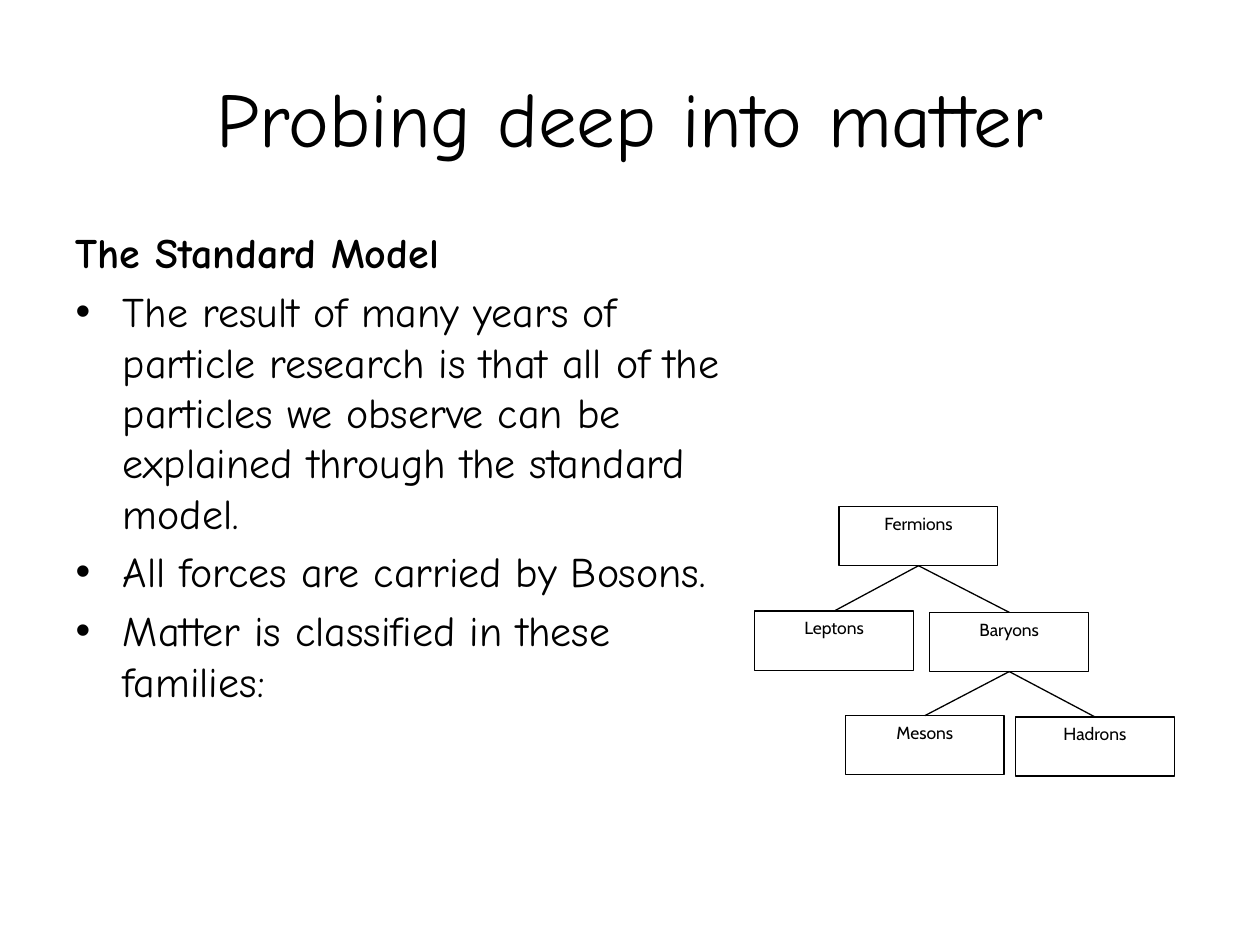
import dataclasses
import typing

import lxml.etree
import pptx
import pptx.dml.color
import pptx.enum.shapes
import pptx.enum.text
import pptx.oxml.ns
import pptx.util

Inches = pptx.util.Inches
Align = pptx.enum.text.PP_ALIGN
Anchor = pptx.enum.text.MSO_ANCHOR


@dataclasses.dataclass(frozen=True)
class Theme:
    ink: pptx.dml.color.RGBColor = pptx.dml.color.RGBColor(0, 0, 0)
    paper: pptx.dml.color.RGBColor = pptx.dml.color.RGBColor(255, 255, 255)
    hand: str = "Comic Neue"
    label: str = "Cabin"
    title: float = 44
    body: float = 24
    small: float = 10
    line: float = 0.75


@dataclasses.dataclass(frozen=True)
class Node:
    name: str
    left: float
    top: float
    parent: typing.Optional[str] = None


THEME = Theme()
BOX = (1.26, 0.47)
BOTTOM, TOP = 2, 0  # connection sites of a rectangle

HEAD = "The Standard Model"
POINTS = [
    "The result of many years of particle research is that all of the "
    "particles we observe can be explained through the standard model.",
    "All forces are carried by Bosons.",
    "Matter is classified in these families:",
]
TREE = [
    Node("Fermions", 6.66, 4.02),
    Node("Leptons", 5.99, 4.85, "Fermions"),
    Node("Baryons", 7.38, 4.86, "Fermions"),
    Node("Mesons", 6.71, 5.68, "Baryons"),
    Node("Hadrons", 8.06, 5.69, "Baryons"),
]


def style(para, font: str, size: float, bold: bool = False) -> None:
    for run in para.runs:
        run.font.name = font
        run.font.size = pptx.util.Pt(size)
        run.font.bold = bold
        run.font.color.rgb = THEME.ink


def place(shape, left: float, top: float, width: float, height: float) -> None:
    shape.left, shape.top = Inches(left), Inches(top)
    shape.width, shape.height = Inches(width), Inches(height)
    shape.text_frame.auto_size = pptx.enum.text.MSO_AUTO_SIZE.NONE


def add_node(group, node: Node):
    box = group.shapes.add_shape(
        pptx.enum.shapes.MSO_SHAPE.RECTANGLE,
        *map(Inches, (node.left, node.top, *BOX)))
    box.shadow.inherit = False
    box.fill.solid()
    box.fill.fore_color.rgb = THEME.paper
    box.line.color.rgb = THEME.ink
    box.line.width = pptx.util.Pt(THEME.line)
    frame = box.text_frame
    frame.text = node.name
    frame.vertical_anchor = Anchor.TOP
    frame.paragraphs[0].alignment = Align.CENTER
    style(frame.paragraphs[0], THEME.label, THEME.small)
    return box


def add_link(group, parent, child) -> None:
    link = group.shapes.add_connector(
        pptx.enum.shapes.MSO_CONNECTOR.STRAIGHT, 0, 0, 0, 0)
    link.begin_connect(parent, BOTTOM)
    link.end_connect(child, TOP)
    link.line.color.rgb = THEME.ink
    link.line.width = pptx.util.Pt(THEME.line)
    props = link.element.spPr
    lxml.etree.SubElement(props, pptx.oxml.ns.qn("a:effectLst"))


def main() -> None:
    deck = pptx.Presentation()
    deck.slide_width, deck.slide_height = Inches(10), Inches(7.5)
    slide = deck.slides.add_slide(deck.slide_layouts[1])

    # Title
    title = slide.shapes.title
    place(title, 0.5, 0.3, 9, 1.25)
    title.text_frame.text = "Probing deep into matter"
    title.text_frame.vertical_anchor = Anchor.MIDDLE
    title.text_frame.paragraphs[0].alignment = Align.CENTER
    style(title.text_frame.paragraphs[0], THEME.hand, THEME.title)

    # Heading and bullet list
    body = slide.placeholders[1]
    place(body, 0.5, 1.75, 5.42, 4.95)
    body.text_frame.text = "\n".join([HEAD, *POINTS])
    head, *points = body.text_frame.paragraphs
    style(head, THEME.hand, THEME.body, bold=True)
    lxml.etree.SubElement(
        head._p.get_or_add_pPr(), pptx.oxml.ns.qn("a:buNone"))
    for point in points:
        style(point, THEME.hand, THEME.body)

    # Family tree of matter
    group = slide.shapes.add_group_shape()
    boxes = {node.name: add_node(group, node) for node in TREE}
    for node in TREE:
        if node.parent:
            add_link(group, boxes[node.parent], boxes[node.name])

    deck.save("out.pptx")


if __name__ == "__main__":
    main()
